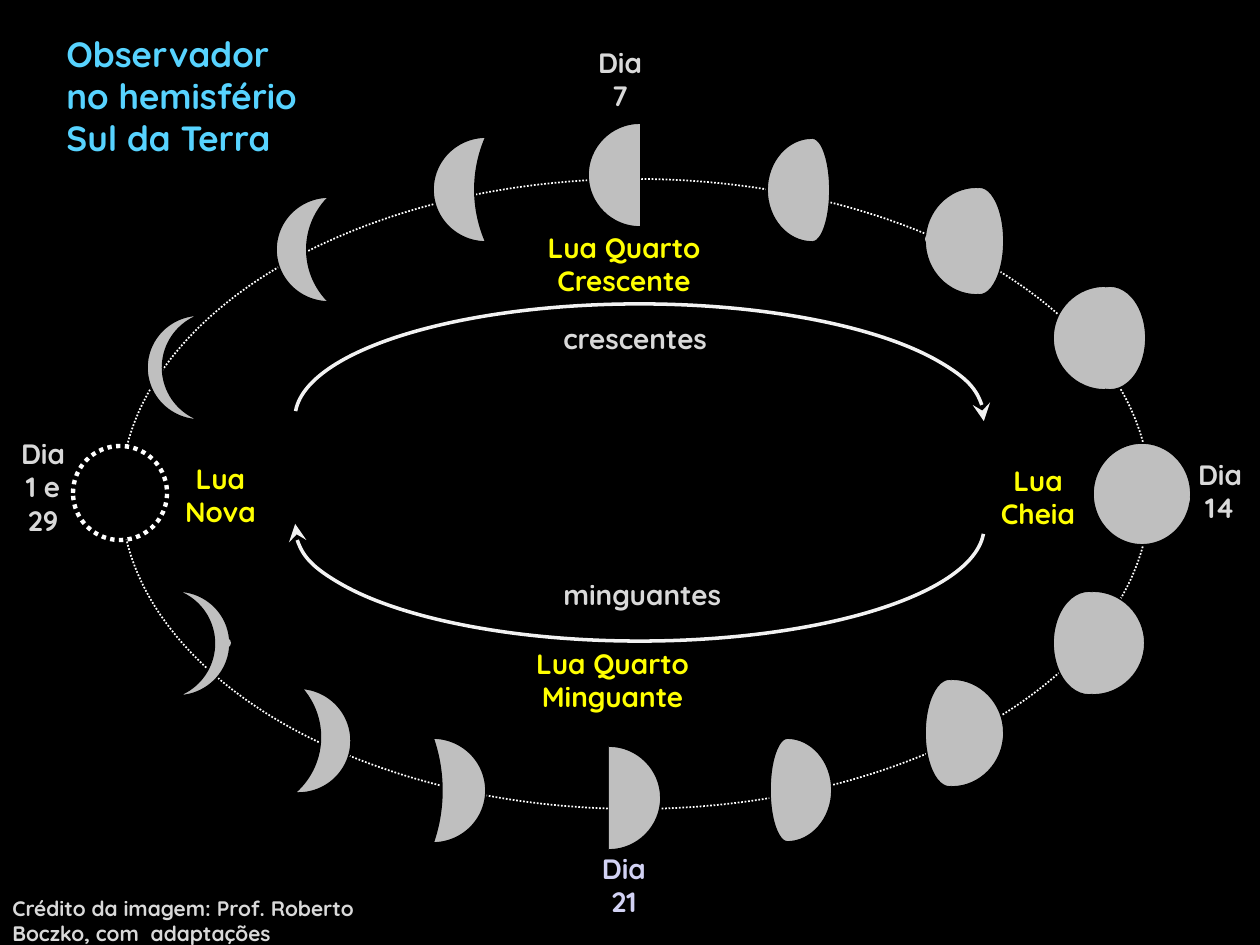
from copy import deepcopy

from lxml import etree
from pptx import Presentation
from pptx.dml.color import RGBColor
from pptx.enum.dml import MSO_LINE
from pptx.enum.shapes import MSO_SHAPE
from pptx.enum.text import MSO_AUTO_SIZE, PP_ALIGN
from pptx.oxml.ns import qn
from pptx.util import Emu, Pt

SCALE = 914400 / 126
FONT = "Quicksand"
BLACK, WHITE, MOON, ARROW = "000000", "FFFFFF", "BFBFBF", "F2F2F2"
GREY, YELLOW, BLUE, LILAC = "D9D9D9", "FFFF00", "57D3FF", "D2D2F4"
ROUNDNESS = 0.55  # handle length of a quarter ellipse, as a share of its radius

ORBIT = (121, 179, 1029, 630)
NEW_MOON = (73, 446, 94, 94)
FULL_MOON = (1093, 443, 98, 102)
FULL_MOON_SPOTS = [(1101, 495), (1180, 494)]
CRESCENT_SIZE = (53, 105)
SPOT_SIZE = (10, 10)

# left, top, thickness, rotation, spot
CRESCENTS = [
    (147, 315, 0.296, 0, (151, 362)),
    (276, 197, 0.583, 0, (278, 243)),
    (433, 137, 0.792, 0, (435, 188)),
    (177, 591, 0.296, 180, (221, 638)),
    (433, 738, 0.833, 180, (475, 786)),
    (298, 690, 0.583, 184, (338, 741)),
]

# half disc box, side it bulges to, (left, width) of the far ellipse, spot
HALF_AND_GIBBOUS = [
    ((588, 123, 52, 104), "left", None, (592, 170)),
    ((767, 138, 45, 104), "left", (795, 35), (775, 186)),
    ((925, 187, 52, 108), "left", (955, 49), (925, 234)),
    ((1053, 286, 52, 104), "left", (1074, 72), (1057, 335)),
    ((1093, 591, 52, 104), "right", (1053, 72), (1130, 634)),
    ((952, 679, 52, 108), "right", (925, 49), (993, 730)),
    ((787, 738, 45, 104), "right", (770, 35), (813, 784)),
    ((609, 746, 52, 104), "right", None, (650, 795)),
]

# box, rotation
CYCLE_ARROWS = [((295, 304, 689, 228), 0), ((295, 413, 689, 228), 180)]

# text, box, format
LABELS = [
    ("Dia\n1 e\n29", (8, 430, 70, 115), dict(wrap=False)),
    ("Lua\nNova", (171, 455, 99, 81), dict(color=YELLOW, wrap=False)),
    ("Dia\n7", (585, 39, 70, 81), dict(wrap=False)),
    ("Lua Quarto Crescente", (469, 224, 310, 81), dict(color=YELLOW)),
    ("Dia\n14", (1185, 451, 70, 81), dict(wrap=False)),
    ("Lua\nCheia", (984, 457, 108, 81), dict(color=YELLOW, wrap=False)),
    ("Dia\n21", (587, 845, 74, 81), dict(color=LILAC)),
    ("Lua Quarto \nMinguante", (520, 640, 185, 81), dict(color=YELLOW, wrap=False)),
    ("Observador no hemisfério Sul da Terra", (54, 26, 277, 140),
     dict(size=20, color=BLUE, align=PP_ALIGN.LEFT)),
    ("Crédito da imagem: Prof. Roberto\nBoczko, com  adaptações", (0, 889, 748, 63),
     dict(size=12, align=PP_ALIGN.LEFT)),
    ("crescentes", (551, 315, 178, 47), dict(align=PP_ALIGN.LEFT)),
    ("minguantes", (551, 571, 197, 47), dict(align=PP_ALIGN.LEFT)),
]


def px(value):
    return Emu(round(value * SCALE))


def rgb(color):
    return RGBColor.from_string(color)


def paint(shape, fill=None, line=None, width=1, dash=None):
    shape.shadow.inherit = False
    if fill:
        shape.fill.solid()
        shape.fill.fore_color.rgb = rgb(fill)
    else:
        shape.fill.background()
    if line:
        shape.line.color.rgb = rgb(line)
        shape.line.width = Pt(width)
        if dash:
            shape.line.dash_style = dash
    else:
        shape.line.fill.background()


def add_preset(shapes, kind, box, rotation=0, adjustments=(), **look):
    shape = shapes.add_shape(kind, *map(px, box))
    shape.rotation = rotation
    for index, value in enumerate(adjustments):
        shape.adjustments[index] = value
    paint(shape, **look)
    return shape


def add_spot(shapes, position):
    add_preset(shapes, MSO_SHAPE.OVAL, position + SPOT_SIZE, fill=MOON)


def bend(segment, *points):
    """Turn a straight path segment into a cubic curve through the given points."""
    curve = etree.Element(qn("a:cubicBezTo"))
    for x, y in points:
        etree.SubElement(curve, qn("a:pt"), x=str(round(x)), y=str(round(y)))
    segment.getparent().replace(segment, curve)


def add_half_disc(shapes, box, side):
    """Half ellipse bulging to one side, outlined along its curve only."""
    left, top, width, height = box
    chord, rim = (left + width, left) if side == "left" else (left, left + width)
    middle = top + height / 2
    builder = shapes.build_freeform(px(chord), px(top))
    builder.add_line_segments([(px(rim), px(middle)), (px(chord), px(top + height)),
                               (px(chord), px(middle))], close=True)
    half = builder.convert_to_shape()
    paint(half, fill=MOON, line=BLACK)

    disc = next(half._element.iter(qn("a:path")))
    w, h = half.width, half.height
    chord_x, rim_x = (w, 0) if side == "left" else (0, w)
    handle_x = chord_x + (rim_x - chord_x) * ROUNDNESS
    handle_y = h / 2 * ROUNDNESS
    upper, lower, _ = disc.findall(qn("a:lnTo"))
    bend(upper, (handle_x, 0), (rim_x, h / 2 - handle_y), (rim_x, h / 2))
    bend(lower, (rim_x, h / 2 + handle_y), (handle_x, h), (chord_x, h))

    rim_path = deepcopy(disc)
    for tag in ("a:lnTo", "a:close"):
        rim_path.remove(rim_path.find(qn(tag)))
    rim_path.set("fill", "none")
    disc.set("stroke", "0")
    disc.addprevious(rim_path)


def add_label(shapes, text, box, size=16, color=GREY, align=PP_ALIGN.CENTER, wrap=True):
    frame = shapes.add_textbox(*map(px, box)).text_frame
    frame.word_wrap = wrap
    frame.auto_size = MSO_AUTO_SIZE.SHAPE_TO_FIT_TEXT
    for index, line in enumerate(text.split("\n")):
        paragraph = frame.add_paragraph() if index else frame.paragraphs[0]
        paragraph.alignment = align
        run = paragraph.add_run()
        run.text = line
        run.font.name = FONT
        run.font.size = Pt(size)
        run.font.bold = True
        run.font.color.rgb = rgb(color)


def main():
    deck = Presentation()
    deck.slide_width, deck.slide_height = px(1260), px(945)
    slide = deck.slides.add_slide(deck.slide_layouts[6])
    slide.background.fill.solid()
    slide.background.fill.fore_color.rgb = rgb(BLACK)
    shapes = slide.shapes

    add_preset(shapes, MSO_SHAPE.OVAL, ORBIT, line=WHITE, dash=MSO_LINE.ROUND_DOT)
    add_preset(shapes, MSO_SHAPE.OVAL, NEW_MOON, fill=BLACK, line=WHITE, width=2.5,
               dash=MSO_LINE.ROUND_DOT)

    for left, top, thickness, rotation, spot in CRESCENTS:
        phase = shapes.add_group_shape().shapes
        add_preset(phase, MSO_SHAPE.MOON, (left, top) + CRESCENT_SIZE, rotation,
                   [thickness], fill=MOON, line=BLACK)
        add_spot(phase, spot)

    for box, side, far_ellipse, spot in HALF_AND_GIBBOUS:
        phase = shapes.add_group_shape().shapes
        if far_ellipse:
            left, width = far_ellipse
            add_preset(phase, MSO_SHAPE.OVAL, (left, box[1], width, box[3]),
                       fill=MOON, line=BLACK)
        add_half_disc(phase, box, side)
        add_spot(phase, spot)

    full_moon = shapes.add_group_shape().shapes
    add_preset(full_moon, MSO_SHAPE.OVAL, FULL_MOON, fill=MOON, line=BLACK)
    for spot in FULL_MOON_SPOTS:
        add_spot(full_moon, spot)

    for box, rotation in CYCLE_ARROWS:
        arrow = add_preset(shapes, MSO_SHAPE.ARC, box, rotation, [108.68, 0.32],
                           line=ARROW, width=2)
        outline = arrow._element.spPr.find(qn("a:ln"))
        etree.SubElement(outline, qn("a:tailEnd"), type="stealth", w="lg", len="lg")

    for text, box, text_format in LABELS:
        add_label(shapes, text, box, **text_format)

    deck.save("out.pptx")


if __name__ == "__main__":
    main()
